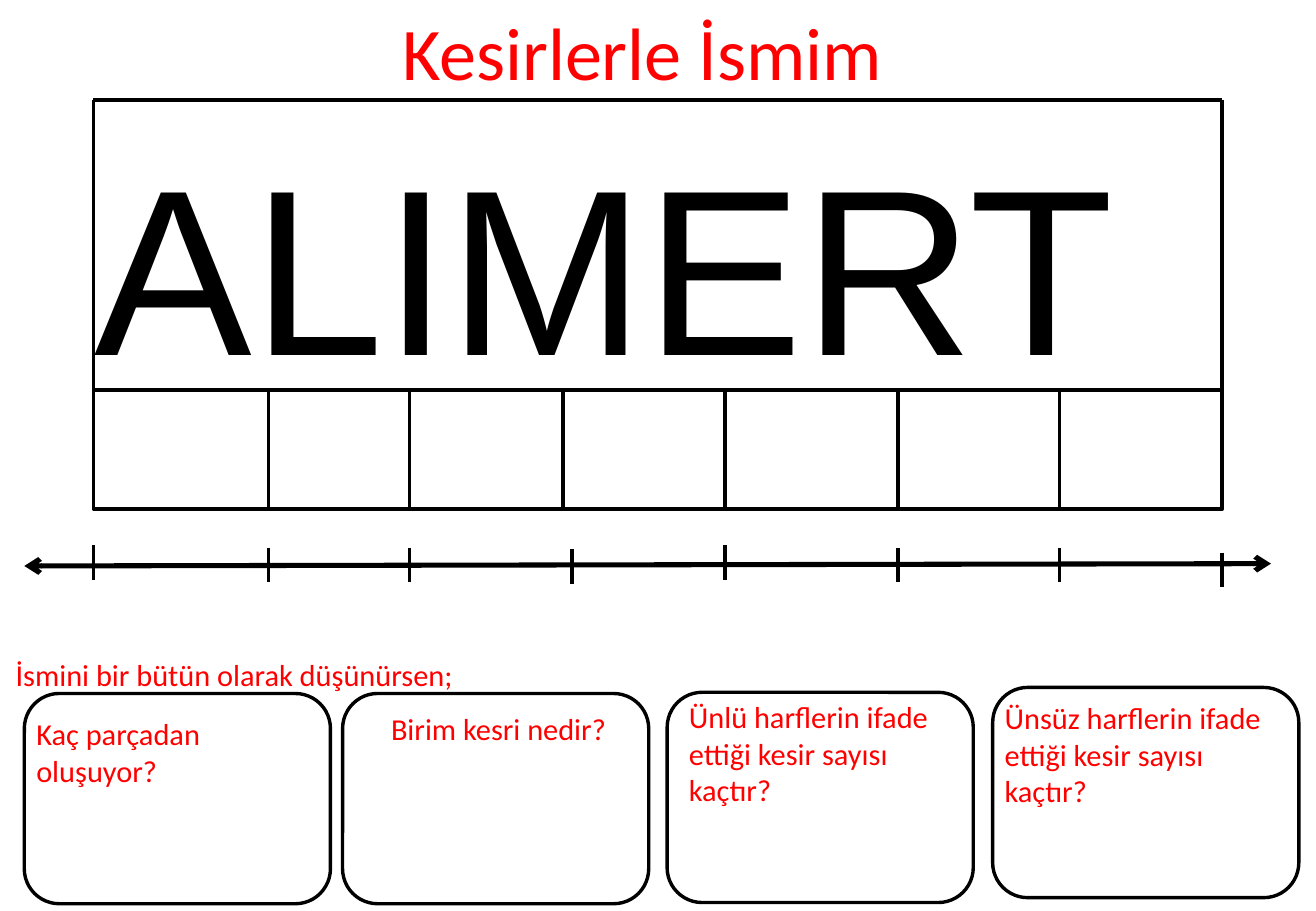
from pptx import Presentation
from pptx.dml.color import RGBColor
from pptx.enum import shapes, text
from pptx.oxml.ns import qn
from pptx.util import Pt
from lxml import etree

COLORS = {"ink": "000000", "accent": "FF0000", "paper": "FFFFFF"}

# Where the letters of the name begin and end, from the left of the frame
LETTER_EDGES = [0, 103.7, 187.2, 278, 374.4, 476.7, 572.4, 668.9]
# Number line ticks: x from the left of the frame, y of the top
TICKS = [(0, 323.3), (103.7, 324.7), (187.2, 324.7), (283.7, 325.4),
         (374.4, 323.3), (476.7, 324.7), (572.4, 324.7), (668.9, 327.6)]
TICK_LENGTH = 20.5
# Question boxes: left, top, question, its offset in the box, its height
QUESTIONS = [
    (14.4, 411.1, "Kaç parçadan oluşuyor?", 0, 9.4, 29),
    (203, 411.1, "Birim kesri nedir?", 21.6, 6.5, 29),
    (395.3, 410.4, "Ünlü harflerin ifade ettiği kesir sayısı kaçtır?", 5.8, 0, 51),
    (588.2, 407.5, "Ünsüz harflerin ifade ettiği kesir sayısı kaçtır?", 0, 3.6, 51),
]


def color(key):
    return RGBColor.from_string(COLORS[key])


def add_label(slide, box, wording, size, font="Calibri", ink="accent"):
    label = slide.shapes.add_textbox(*map(Pt, box))
    frame = label.text_frame
    frame.word_wrap = True
    frame.auto_size = text.MSO_AUTO_SIZE.SHAPE_TO_FIT_TEXT
    paragraph = frame.paragraphs[0]
    paragraph.text = wording
    paragraph.font.name = font
    paragraph.font.size = Pt(size)
    paragraph.font.color.rgb = color(ink)


def add_panel(slide, preset, box, weight):
    panel = slide.shapes.add_shape(preset, *map(Pt, box))
    panel.shadow.inherit = False
    panel.fill.solid()
    panel.fill.fore_color.rgb = color("paper")
    panel.line.color.rgb = color("ink")
    panel.line.width = Pt(weight)


def add_rule(slide, x1, y1, x2, y2, weight=2.25):
    rule = slide.shapes.add_connector(
        shapes.MSO_CONNECTOR.STRAIGHT, Pt(x1), Pt(y1), Pt(x2), Pt(y2))
    rule.line.color.rgb = color("ink")
    rule.line.width = Pt(weight)
    etree.SubElement(rule._element.spPr, qn("a:effectLst"))
    return rule


def add_name_frame(slide, left, top, width, height, strip_height):
    right, bottom = left + width, top + height
    # Strip with one cell under each letter
    add_panel(slide, shapes.MSO_SHAPE.RECTANGLE, (left, bottom, width, strip_height), 2.25)
    for edge in LETTER_EDGES[1:-1]:
        add_rule(slide, left + edge, bottom, left + edge, bottom + strip_height)
    # Name and the three open sides around it
    add_label(slide, (left - 6.4, top + 8, 743, 177), "ALIMERT", 140, "Arial", "ink")
    add_rule(slide, left, top, left, bottom)
    add_rule(slide, left, top, right, top)
    add_rule(slide, right, top, right, bottom)


def add_number_line(slide, left, y, width, origin):
    axis = add_rule(slide, left, y, left + width, y - 1.4, 3)
    for end in ("headEnd", "tailEnd"):
        etree.SubElement(axis.line._get_or_add_ln(), qn(f"a:{end}"), type="arrow")
    for offset, top in TICKS:
        add_rule(slide, origin + offset, top, origin + offset, top + TICK_LENGTH)


def add_questions(slide, width, height):
    for left, top, question, dx, dy, label_height in QUESTIONS:
        add_panel(slide, shapes.MSO_SHAPE.ROUNDED_RECTANGLE, (left, top, width, height), 2)
        add_label(slide, (left + dx, top + dy, width, label_height), question, 18)


def main():
    deck = Presentation()
    deck.slide_width, deck.slide_height = Pt(779.76), Pt(540)
    slide = deck.slides.add_slide(deck.slide_layouts[6])

    # Title
    add_label(slide, (231.1, 0, 447, 60.5), "Kesirlerle İsmim", 44)
    # Name and number line
    add_name_frame(slide, 55.4, 59.2, 668.9, 171.9, 70.6)
    add_number_line(slide, 14.4, 335.5, 738.7, 55.4)
    # Questions and their lead-in
    add_questions(slide, 181.4, 124.6)
    add_label(slide, (2.2, 385.2, 292.3, 29), "İsmini bir bütün olarak düşünürsen;", 18)

    deck.save("out.pptx")


if __name__ == "__main__":
    main()
